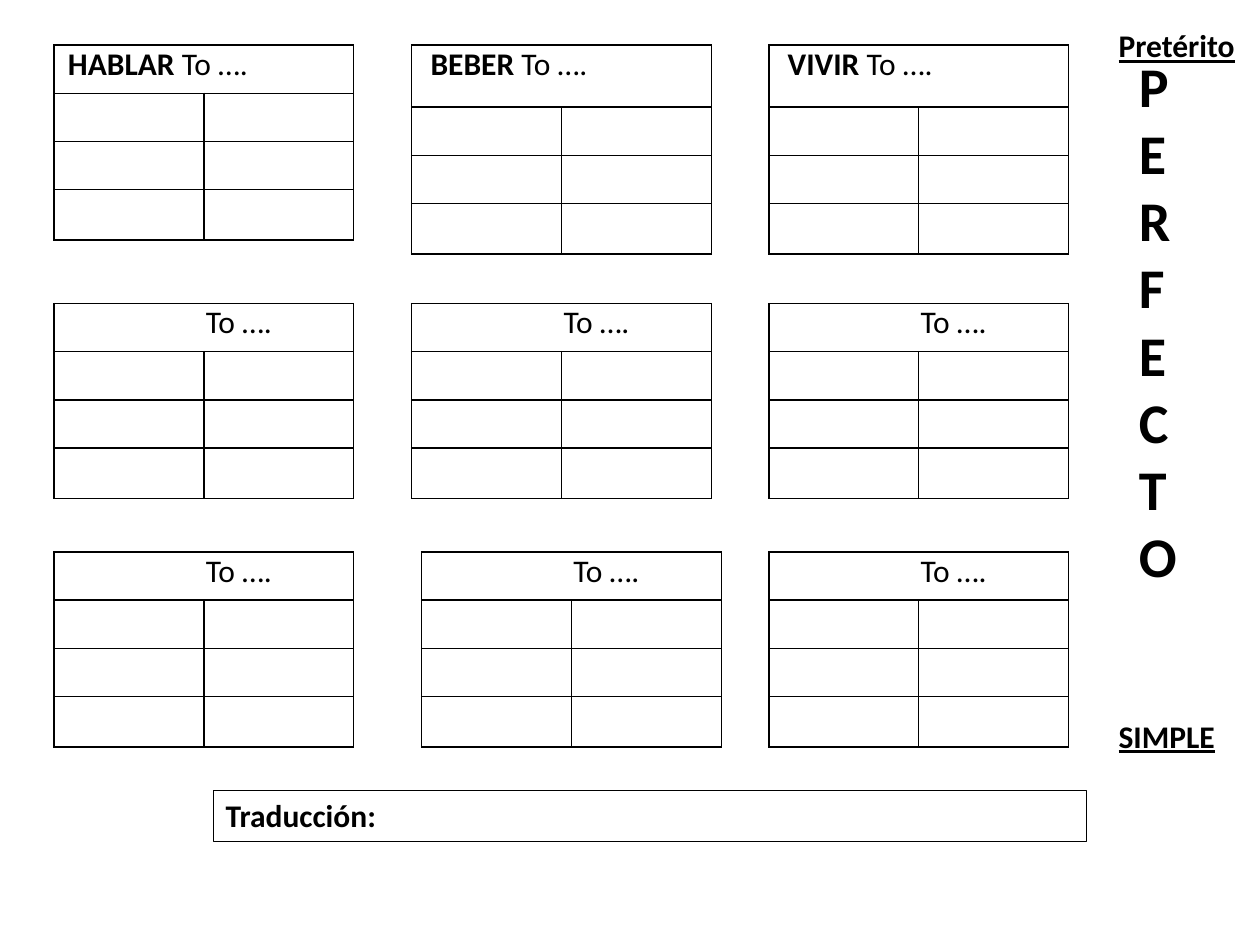
from dataclasses import dataclass

from pptx import Presentation
from pptx.dml.color import RGBColor
from pptx.enum.shapes import MSO_SHAPE as Shape
from pptx.enum.text import MSO_ANCHOR as Anchor, MSO_AUTO_SIZE as AutoSize, PP_ALIGN as Align
from pptx.oxml import parse_xml
from pptx.oxml.ns import nsdecls
from pptx.util import Cm, Pt


@dataclass(frozen=True)
class Theme:
    font: str = "Calibri"
    ink: str = "000000"
    body_size: int = 18
    banner_size: int = 32
    grid_line: float = 1
    frame_line: float = 0.75


class Worksheet:
    def __init__(self, slide, theme):
        self.slide = slide
        self.theme = theme
        self.ink = RGBColor.from_string(theme.ink)

    def run(self, paragraph, text, bold=False, underline=False, size=None):
        run = paragraph.add_run()
        run.text = text
        font = run.font
        font.name = self.theme.font
        font.size = Pt(size or self.theme.body_size)
        font.bold = bold
        font.underline = underline
        font.color.rgb = self.ink

    def border(self, cell):
        properties = cell._tc.get_or_add_tcPr()
        for position, side in enumerate(("lnL", "lnR", "lnT", "lnB")):
            line = parse_xml(
                f'<a:{side} {nsdecls("a")} w="{Pt(self.theme.grid_line)}">'
                f'<a:solidFill><a:srgbClr val="{self.theme.ink}"/></a:solidFill>'
                f'</a:{side}>'
            )
            properties.insert(position, line)

    def verb_table(self, left, top, verb, header_height, indent):
        heights = [header_height, 0.97, 0.97, 1.02]
        column_width = 3.02
        frame = self.slide.shapes.add_table(
            len(heights), 2, Cm(left), Cm(top), Cm(2 * column_width), Cm(sum(heights))
        )
        table = frame.table
        table.first_row = False
        table.horz_banding = False
        for column in table.columns:
            column.width = Cm(column_width)
        for row, height in zip(table.rows, heights):
            row.height = Cm(height)
        for cell in table.iter_cells():
            cell.margin_left = cell.margin_right = Cm(0.18)
            cell.margin_top = cell.margin_bottom = 0
            cell.fill.background()
            self.border(cell)
        header = table.cell(0, 0)
        header.merge(table.cell(0, 1))
        paragraph = header.text_frame.paragraphs[0]
        paragraph._p.get_or_add_pPr().set("marL", str(Cm(indent)))
        if verb:
            self.run(paragraph, verb, bold=True)
            self.run(paragraph, " To ….")
        else:
            self.run(paragraph, "To ….")

    def label(self, text, left, top, width, height):
        box = self.slide.shapes.add_textbox(Cm(left), Cm(top), Cm(width), Cm(height))
        frame = box.text_frame
        frame.word_wrap = False
        frame.auto_size = AutoSize.SHAPE_TO_FIT_TEXT
        self.run(frame.paragraphs[0], text, bold=True, underline=True)

    def stacked_banner(self, text, left, top, width, height):
        box = self.slide.shapes.add_textbox(Cm(left), Cm(top), Cm(width), Cm(height))
        frame = box.text_frame
        frame.word_wrap = True
        frame.auto_size = AutoSize.SHAPE_TO_FIT_TEXT
        frame._txBody.bodyPr.set("vert", "wordArtVert")
        self.run(frame.paragraphs[0], text, bold=True, size=self.theme.banner_size)

    def framed_box(self, text, left, top, width, height):
        box = self.slide.shapes.add_shape(
            Shape.RECTANGLE, Cm(left), Cm(top), Cm(width), Cm(height)
        )
        box.shadow.inherit = False
        box.fill.background()
        box.line.color.rgb = self.ink
        box.line.width = Pt(self.theme.frame_line)
        frame = box.text_frame
        frame.word_wrap = True
        frame.auto_size = AutoSize.SHAPE_TO_FIT_TEXT
        frame.vertical_anchor = Anchor.TOP
        paragraph = frame.paragraphs[0]
        paragraph.alignment = Align.LEFT
        self.run(paragraph, text, bold=True)


def main():
    presentation = Presentation()
    presentation.slide_width = Cm(25.4)
    presentation.slide_height = Cm(19.05)
    slide = presentation.slides.add_slide(presentation.slide_layouts[6])
    worksheet = Worksheet(slide, Theme())

    lefts = [1.09, 8.3, 15.5]
    tops = [0.91, 6.12, 11.13]
    model_verbs = [("HABLAR", 0.97, 0.1), ("BEBER", 1.25, 0.2), ("VIVIR", 1.25, 0.2)]
    for left, (verb, header_height, indent) in zip(lefts, model_verbs):
        worksheet.verb_table(left, tops[0], verb, header_height, indent)
    for row, top in enumerate(tops[1:]):
        for column, left in enumerate(lefts):
            shift = 0.2 if (row, column) == (1, 1) else 0
            worksheet.verb_table(left + shift, top, "", 0.97, 2.88)

    worksheet.stacked_banner("PERFECTO", 22.71, 0.91, 2.13, 18.14)
    worksheet.framed_box("Traducción:", 4.3, 15.93, 17.6, 1.03)
    worksheet.label("Pretérito", 22.3, 0.41, 2.87, 1.03)
    worksheet.label("SIMPLE", 22.3, 14.33, 2.46, 1.03)

    presentation.save("out.pptx")


if __name__ == "__main__":
    main()
